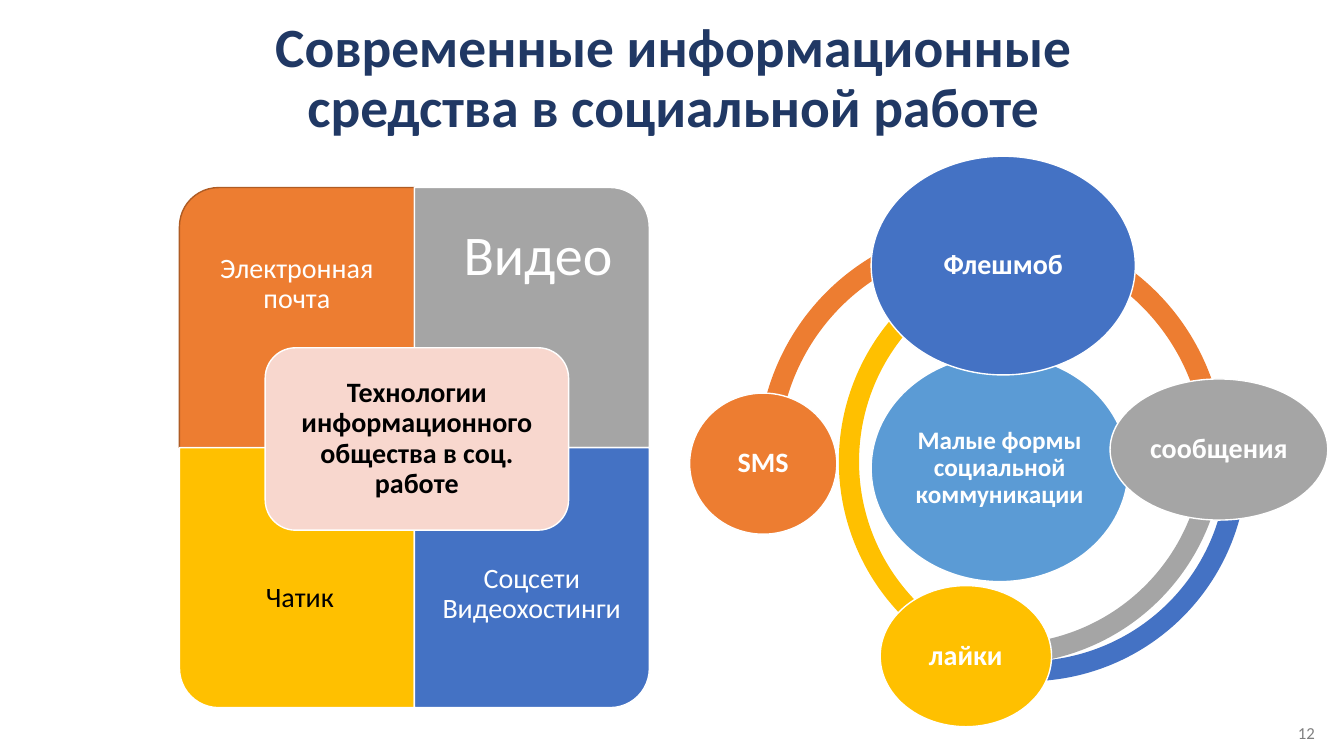
"""Build the slide on modern information tools in social work."""
from typing import NamedTuple

from pptx import Presentation
from pptx import util as u
from pptx.dml.color import RGBColor
from pptx.enum import shapes, text
from pptx.shapes.autoshape import Shape
from pptx.slide import Slide

WHITE = RGBColor(0xFF, 0xFF, 0xFF)
BLACK = RGBColor(0x00, 0x00, 0x00)
NAVY = RGBColor(0x20, 0x38, 0x64)
ORANGE = RGBColor(0xED, 0x7D, 0x31)
RUST = RGBColor(0xAF, 0x5C, 0x24)
GRAY = RGBColor(0xA5, 0xA5, 0xA5)
YELLOW = RGBColor(0xFF, 0xC0, 0x00)
BLUE = RGBColor(0x44, 0x72, 0xC4)
SKY = RGBColor(0x5B, 0x9B, 0xD5)
PEACH = RGBColor(0xF8, 0xD7, 0xCE)
PAGE_GRAY = RGBColor(0x7F, 0x7F, 0x7F)

GRID_LEFT, GRID_TOP = 1.78, 1.86
CELL_W, CELL_H = 2.33, 2.58
LABEL_H = 1.93


class Box(NamedTuple):
    left: float
    top: float
    width: float
    height: float


class Style(NamedTuple):
    size: float
    color: RGBColor
    bold: bool = False
    align: text.PP_ALIGN = text.PP_ALIGN.CENTER


class Quadrant(NamedTuple):
    col: int
    row: int
    rotation: int
    fill: RGBColor
    line: RGBColor
    label: str
    style: Style
    dx: float = 0
    dy: float = 0


class Arc(NamedTuple):
    left: float
    top: float
    size: float
    start: float
    end: float
    thickness: float
    fill: RGBColor


class Bubble(NamedTuple):
    box: Box
    fill: RGBColor
    label: str
    size: float = 20


QUADRANTS = [
    Quadrant(0, 0, 270, ORANGE, RUST, "Электронная почта", Style(20, WHITE)),
    Quadrant(1, 0, 0, GRAY, WHITE, "Видео", Style(40, WHITE), 0.06, -0.27),
    Quadrant(0, 1, 180, YELLOW, WHITE, "Чатик", Style(20, BLACK), 0.03, -0.12),
    Quadrant(1, 1, 90, BLUE, WHITE, "Соцсети\nВидеохостинги", Style(20, WHITE), 0, -0.16),
]
ARCS = [
    Arc(8.01, 2.4, 4.36, 2.36, 58.09, 0.046, BLUE),
    Arc(8.32, 2.4, 4.36, 71.53, 150.9, 0.046, YELLOW),
    Arc(7.78, 2.23, 4.36, 0.72, 60.15, 0.046, GRAY),
    Arc(7.52, 2.22, 4.63, 106.93, 214.93, 0.044, ORANGE),
]
BUBBLES = [
    Bubble(Box(8.64, 3.52, 2.55, 2.25), SKY, "Малые формы социальной коммуникации", 18),
    Bubble(Box(6.84, 3.9, 1.46, 1.4), ORANGE, "SMS"),
    Bubble(Box(11.01, 3.76, 2.16, 1.4), GRAY, "сообщения"),
    Bubble(Box(8.73, 5.81, 1.7, 1.4), YELLOW, "лайки"),
    Bubble(Box(8.64, 1.55, 2.62, 2.17), BLUE, "Флешмоб"),
]


def write(sp: Shape, label: str, style: Style, inset: float) -> None:
    tf = sp.text_frame
    tf.text = label
    tf.word_wrap = True
    tf.vertical_anchor = text.MSO_ANCHOR.MIDDLE
    tf.margin_left = tf.margin_right = u.Inches(inset)
    tf.margin_top = tf.margin_bottom = u.Inches(min(inset, 0.08))
    for p in tf.paragraphs:
        p.alignment = style.align
        p.line_spacing = 0.9
        for r in p.runs:
            r.font.name = "Calibri"
            r.font.size = u.Pt(style.size)
            r.font.bold = style.bold
            r.font.color.rgb = style.color


def add_text(s: Slide, box: Box, label: str, style: Style, inset: float = 0.1) -> None:
    write(s.shapes.add_textbox(*map(u.Inches, box)), label, style, inset)


def add_shape(s: Slide, kind: shapes.MSO_SHAPE, box: Box, fill: RGBColor,
              line: RGBColor | None = WHITE) -> Shape:
    sp = s.shapes.add_shape(kind, *map(u.Inches, box))
    sp.shadow.inherit = False
    sp.fill.solid()
    sp.fill.fore_color.rgb = fill
    if line is None:
        sp.line.fill.background()
    else:
        sp.line.color.rgb = line
        sp.line.width = u.Pt(1)
    return sp


def add_quadrant(s: Slide, q: Quadrant) -> None:
    left, top = GRID_LEFT + q.col * CELL_W, GRID_TOP + q.row * CELL_H
    w, h = (CELL_H, CELL_W) if q.rotation % 180 else (CELL_W, CELL_H)
    box = Box(left + (CELL_W - w) / 2, top + (CELL_H - h) / 2, w, h)
    sp = add_shape(s, shapes.MSO_SHAPE.ROUND_1_RECTANGLE, box, q.fill, q.line)
    sp.rotation = q.rotation
    label_top = top + q.row * (CELL_H - LABEL_H)
    add_text(s, Box(left + q.dx, label_top + q.dy, CELL_W, LABEL_H), q.label, q.style, 0.16)


def add_arc(s: Slide, arc: Arc) -> None:
    box = Box(arc.left, arc.top, arc.size, arc.size)
    sp = add_shape(s, shapes.MSO_SHAPE.BLOCK_ARC, box, arc.fill, None)
    for i, value in enumerate((arc.start, arc.end, arc.thickness)):
        sp.adjustments[i] = value


def add_bubble(s: Slide, b: Bubble) -> None:
    sp = add_shape(s, shapes.MSO_SHAPE.OVAL, b.box, b.fill)
    write(sp, b.label, Style(b.size, WHITE, True), 0.03)


def main() -> None:
    prs = Presentation()
    prs.slide_width, prs.slide_height = u.Inches(13.33), u.Inches(7.5)
    s = prs.slides.add_slide(prs.slide_layouts[6])
    add_text(s, Box(2.18, 0.44, 9, 0.69),
             "Современные информационные средства в социальной работе", Style(39.6, NAVY, True))
    for q in QUADRANTS:
        add_quadrant(s, q)
    center = add_shape(s, shapes.MSO_SHAPE.ROUNDED_RECTANGLE, Box(2.63, 3.45, 3.01, 1.81), PEACH)
    write(center, "Технологии информационного общества в соц. работе",
          Style(20, BLACK, True), 0.08)
    for arc in ARCS:
        add_arc(s, arc)
    for b in BUBBLES:
        add_bubble(s, b)
    add_text(s, Box(11.64, 7.12, 1.5, 0.32), "12",
             Style(12, PAGE_GRAY, align=text.PP_ALIGN.RIGHT))
    prs.save("out.pptx")


if __name__ == "__main__":
    main()
